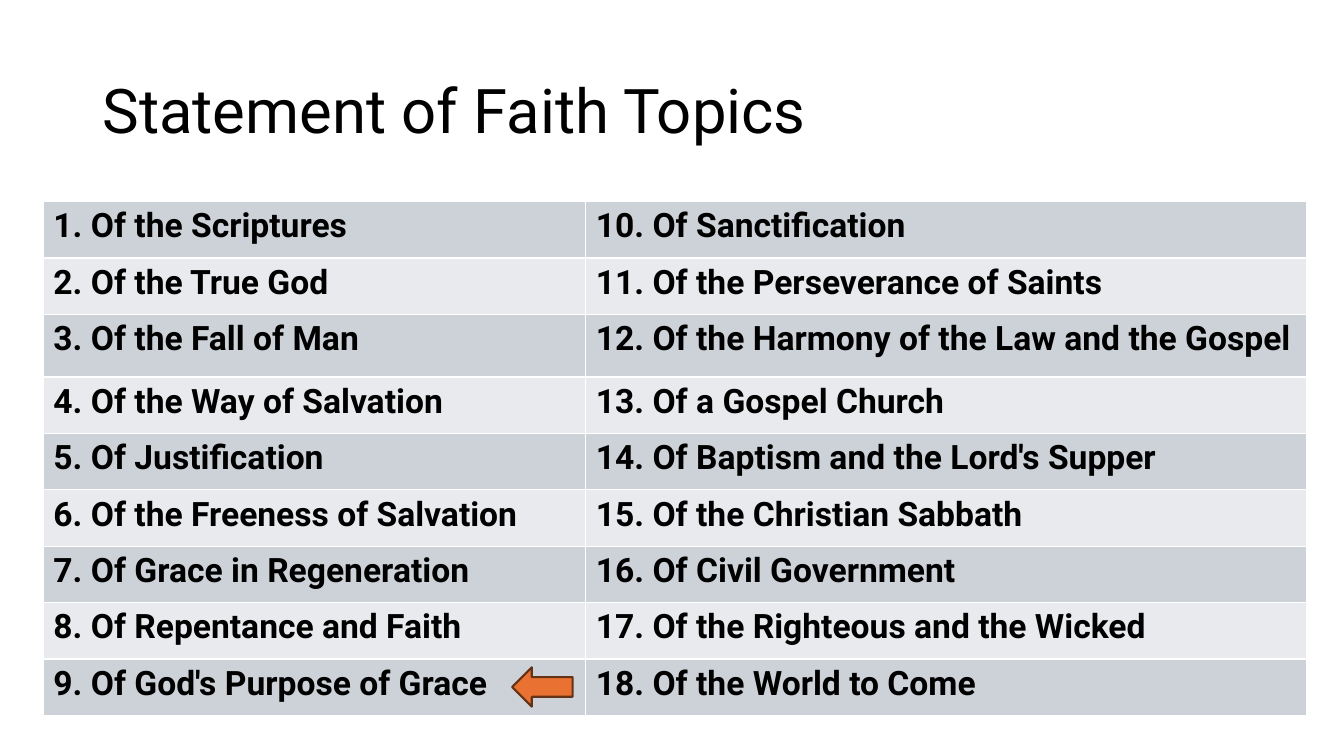
from dataclasses import dataclass

from lxml.etree import SubElement
from pptx import Presentation
from pptx.dml.color import RGBColor
from pptx.enum.shapes import MSO_SHAPE
from pptx.enum.text import MSO_ANCHOR
from pptx.oxml.ns import qn
from pptx.util import Inches, Pt


@dataclass(frozen=True)
class Theme:
    font: str = "Roboto"
    title_size: int = 44
    topic_size: int = 24
    text: str = "000000"
    bands: tuple = ("CCD2D8", "E8EAED")
    grid: str = "FFFFFF"
    grid_width: int = 1
    arrow: str = "E97132"
    arrow_outline: str = "663216"
    arrow_outline_width: float = 1.5


THEME = Theme()

TOPICS = [
    "Of the Scriptures",
    "Of the True God",
    "Of the Fall of Man",
    "Of the Way of Salvation",
    "Of Justification",
    "Of the Freeness of Salvation",
    "Of Grace in Regeneration",
    "Of Repentance and Faith",
    "Of God's Purpose of Grace",
    "Of Sanctification",
    "Of the Perseverance of Saints",
    "Of the Harmony of the Law and the Gospel",
    "Of a Gospel Church",
    "Of Baptism and the Lord's Supper",
    "Of the Christian Sabbath",
    "Of Civil Government",
    "Of the Righteous and the Wicked",
    "Of the World to Come",
]
COLUMN_WIDTHS = (5.38, 7.15)
ROW_COUNT = len(TOPICS) // len(COLUMN_WIDTHS)
ROW_HEIGHT = 0.56
TALL_ROW, TALL_ROW_HEIGHT = 2, 0.62


def style_paragraph(paragraph, size, bold=False):
    font = paragraph.font
    font.name = THEME.font
    font.size = Pt(size)
    font.bold = bold
    font.color.rgb = RGBColor.from_string(THEME.text)


def add_title(slide, title):
    box = slide.shapes.add_textbox(Inches(0.92), Inches(0.4), Inches(11.5), Inches(1.45))
    frame = box.text_frame
    frame.word_wrap = True
    frame.vertical_anchor = MSO_ANCHOR.MIDDLE
    frame.text = title
    heading = frame.paragraphs[0]
    heading.line_spacing = 0.9
    style_paragraph(heading, THEME.title_size)


def add_cell_borders(cell):
    """Draw the grid line on all four sides; call before the cell is filled."""
    properties = cell._tc.get_or_add_tcPr()
    for side in ("a:lnL", "a:lnR", "a:lnT", "a:lnB"):
        line = SubElement(properties, qn(side), w=str(Pt(THEME.grid_width)))
        fill = SubElement(line, qn("a:solidFill"))
        SubElement(fill, qn("a:srgbClr"), val=THEME.grid)


def fill_topic_cell(cell, topic, band):
    add_cell_borders(cell)
    cell.fill.solid()
    cell.fill.fore_color.rgb = RGBColor.from_string(band)
    cell.text = topic
    style_paragraph(cell.text_frame.paragraphs[0], THEME.topic_size, bold=True)


def add_topics_table(slide):
    """Number the topics down the first column, then down the second."""
    table = slide.shapes.add_table(
        ROW_COUNT, len(COLUMN_WIDTHS),
        Inches(0.43), Inches(2), Inches(sum(COLUMN_WIDTHS)), Inches(5.1),
    ).table
    for column, width in zip(table.columns, COLUMN_WIDTHS):
        column.width = Inches(width)
    for index, row in enumerate(table.rows):
        row.height = Inches(TALL_ROW_HEIGHT if index == TALL_ROW else ROW_HEIGHT)
    for index, topic in enumerate(TOPICS):
        column, row = divmod(index, ROW_COUNT)
        band = THEME.bands[row % len(THEME.bands)]
        fill_topic_cell(table.cell(row, column), f"{index + 1}. {topic}", band)


def add_current_topic_arrow(slide):
    arrow = slide.shapes.add_shape(
        MSO_SHAPE.LEFT_ARROW, Inches(5.08), Inches(6.62), Inches(0.6), Inches(0.39)
    )
    arrow.shadow.inherit = False
    arrow.fill.solid()
    arrow.fill.fore_color.rgb = RGBColor.from_string(THEME.arrow)
    arrow.line.color.rgb = RGBColor.from_string(THEME.arrow_outline)
    arrow.line.width = Pt(THEME.arrow_outline_width)


def main():
    presentation = Presentation()
    presentation.slide_width = Inches(13.33)
    presentation.slide_height = Inches(7.5)
    slide = presentation.slides.add_slide(presentation.slide_layouts[6])
    add_title(slide, "Statement of Faith Topics")
    add_topics_table(slide)
    add_current_topic_arrow(slide)
    presentation.save("out.pptx")


if __name__ == "__main__":
    main()
